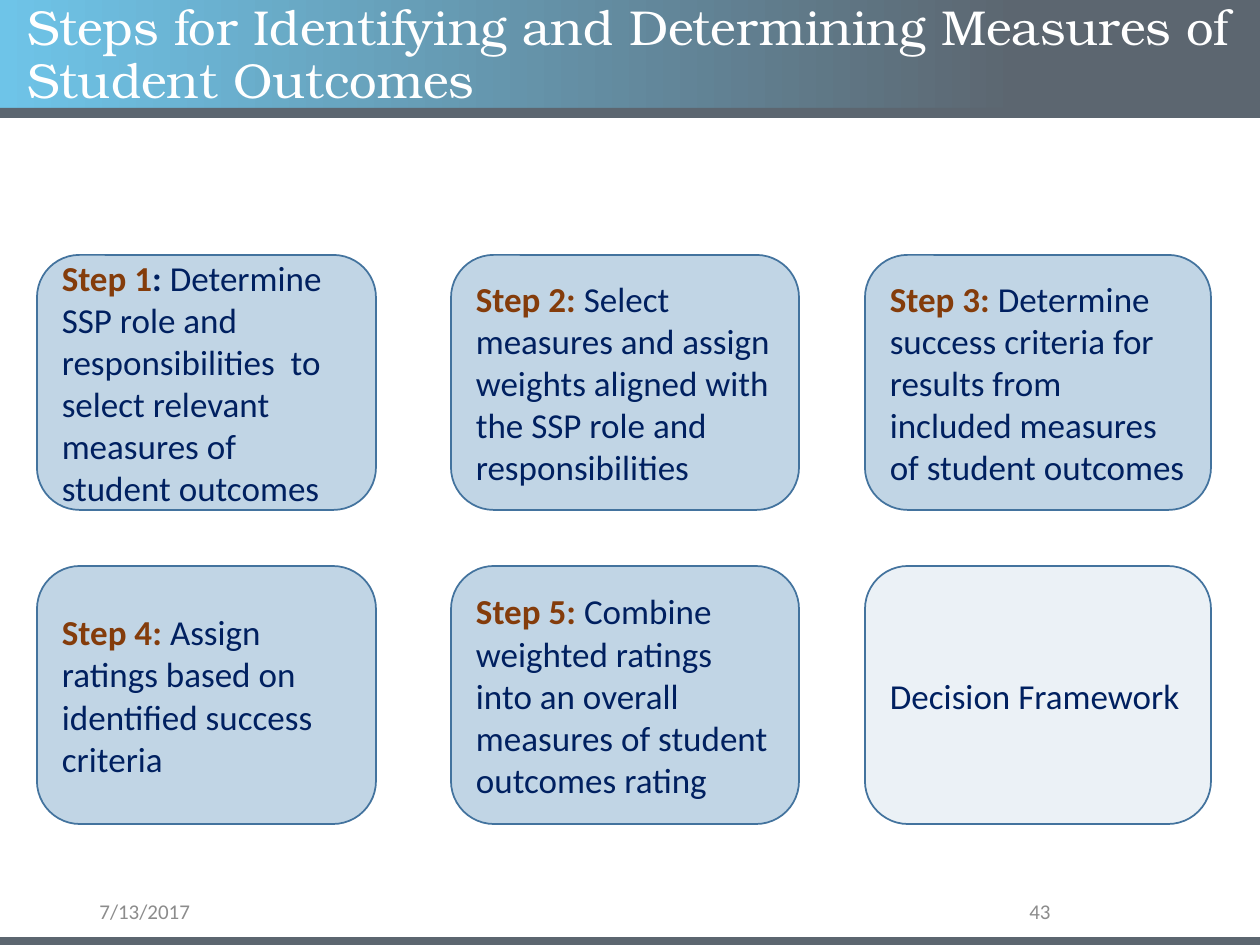
from lxml.etree import SubElement
from pptx import Presentation
from pptx.dml.color import RGBColor
from pptx.enum.shapes import MSO_SHAPE
from pptx.enum.text import MSO_ANCHOR, PP_ALIGN
from pptx.oxml.ns import qn
from pptx.util import Pt

PX = 914400 / 126
SLATE, SKY, STEEL, EDGE = "5C6670", "6EC4E8", "C1D5E5", "43739E"
NAVY, RUST, GRAY, WHITE = "002060", "843C0B", "8C8C8C", "FFFFFF"

COLS = [(37, 339), (451, 348), (865, 346)]
ROWS = [(255, 255), (566, 258)]
STEPS = [
    [("Step 1", RUST, True), (": ", NAVY, True),
     ("Determine SSP role and responsibilities  to select relevant "
      "measures of student outcomes", NAVY, False)],
    [("Step 2: ", RUST, True),
     ("Select measures and assign weights aligned with the SSP role "
      "and responsibilities", NAVY, False)],
    [("Step 3: ", RUST, True),
     ("Determine success criteria for results from included measures "
      "of student outcomes", NAVY, False)],
    [("Step 4: ", RUST, True),
     ("Assign ratings based on identified success criteria", NAVY, False)],
    [("Step 5: ", RUST, True),
     ("Combine weighted ratings into an overall measures of student "
      "outcomes rating", NAVY, False)],
    [("Decision Framework", NAVY, False)],
]


def emu(box):
    return [round(n * PX) for n in box]


def paint(color, value):
    color.rgb = RGBColor.from_string(value)


def write(shape, runs, size, font="Calibri", **form):
    """Fill a shape with one paragraph of (text, colour, bold) runs."""
    frame = shape.text_frame
    frame.word_wrap = True
    frame.vertical_anchor = MSO_ANCHOR.MIDDLE
    para = frame.paragraphs[0]
    for key, value in ({"alignment": PP_ALIGN.LEFT} | form).items():
        setattr(para, key, value)
    for text, color, bold in runs:
        run = para.add_run()
        run.text = text
        for key, value in {"name": font, "size": Pt(size), "bold": bold}.items():
            setattr(run.font, key, value)
        paint(run.font.color, color)


def label(slide, box, text, color, size, **form):
    write(slide.shapes.add_textbox(*emu(box)), [(text, color, False)], size, **form)


def panel(slide, box, fill, kind=MSO_SHAPE.RECTANGLE):
    shape = slide.shapes.add_shape(kind, *emu(box))
    shape.shadow.inherit = False
    shape.fill.solid()
    paint(shape.fill.fore_color, fill)
    shape.line.fill.background()
    return shape


def header(slide, box):
    left, top, width, height = box
    band = panel(slide, (left, top, width, height - 9), SKY)
    band.fill.gradient()
    band.fill.gradient_angle = 0
    for stop, (place, color) in zip(band.fill.gradient_stops, [(0, SKY), (0.81, SLATE)]):
        stop.position = place
        paint(stop.color, color)
    panel(slide, (left, top + height - 10, width, 10), SLATE)
    label(slide, (left + 15, top - 16, width - 33, 145),
          "Steps for Identifying and Determining Measures of Student Outcomes",
          WHITE, 28, font="TeX Gyre Bonum", line_spacing=0.9)


def card(slide, box, runs, alpha=100):
    """Place a rounded step card; alpha is the fill's opacity in percent."""
    shape = panel(slide, box, STEEL, MSO_SHAPE.ROUNDED_RECTANGLE)
    paint(shape.line.color, EDGE)
    shape.line.width = Pt(1)
    if alpha < 100:
        color = shape.fill._xPr.find(qn("a:solidFill"))[0]
        SubElement(color, qn("a:alpha"), val=str(alpha * 1000))
    write(shape, runs, 20, space_after=Pt(6))


def grid(slide):
    spots = [(x, y, w, h) for y, h in ROWS for x, w in COLS]
    for box, runs in zip(spots, STEPS):
        card(slide, box, runs, 32 if runs is STEPS[-1] else 100)


def footer(slide, box):
    left, top, width, height = box
    label(slide, (left + 87, top, 284, 29), "7/13/2017", GRAY, 12)
    label(slide, (left + 889, top, 174, 29), "43", GRAY, 12,
          alignment=PP_ALIGN.RIGHT)
    panel(slide, (left, top + height - 8, width, 8), SLATE)


def main():
    deck = Presentation()
    deck.slide_width, deck.slide_height = emu((1260, 945))
    slide = deck.slides.add_slide(deck.slide_layouts[6])
    header(slide, (0, 0, 1260, 118))
    grid(slide)
    footer(slide, (0, 897, 1260, 48))
    deck.save("out.pptx")


if __name__ == "__main__":
    main()
